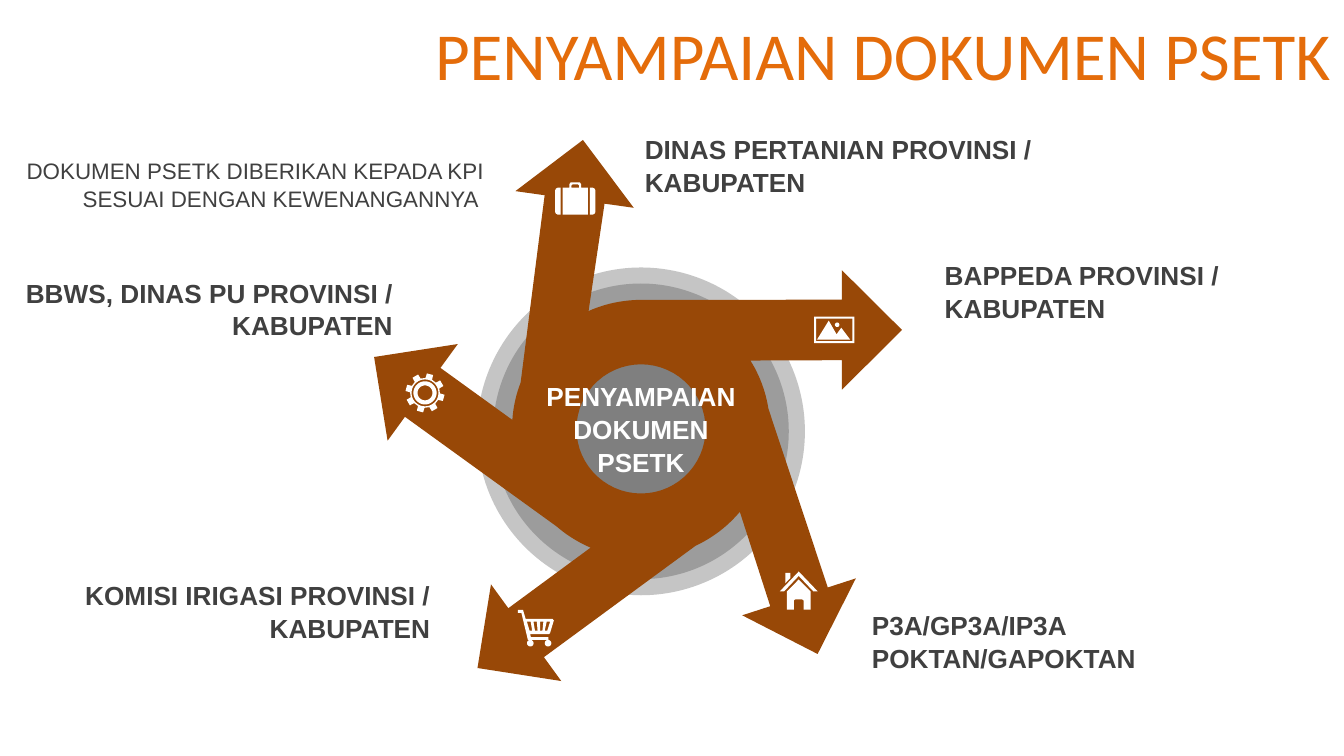
from math import cos, radians, sin

from lxml import etree
from pptx import Presentation
from pptx.dml.color import RGBColor
from pptx.enum.shapes import MSO_SHAPE
from pptx.enum.text import MSO_ANCHOR, PP_ALIGN
from pptx.oxml.ns import qn
from pptx.util import Pt

OVAL = MSO_SHAPE.OVAL
TOP, MIDDLE = MSO_ANCHOR.TOP, MSO_ANCHOR.MIDDLE
LEFT, CENTER, RIGHT = PP_ALIGN.LEFT, PP_ALIGN.CENTER, PP_ALIGN.RIGHT

ORANGE = RGBColor(0xE4, 0x6C, 0x0A)
BROWN = RGBColor(0x98, 0x48, 0x07)
GRAY = RGBColor(0x3F, 0x3F, 0x3F)
INK = RGBColor(0x40, 0x40, 0x40)
WHITE = RGBColor(0xFF, 0xFF, 0xFF)

HUB = (343.4, 229.8)
HUB_RADIUS = 69.1
HOLE_RADIUS = 34.6
RING_CENTER = (343.4, 231.1)
RING_RADII = (87.8, 79.2, 54)
HEAD_LENGTH, HEAD_HALF, SHAFT_HALF = 32.2, 32, 16.2

# hub arc start and end (degrees), arrow tip, arrow heading (degrees)
ARROWS = [
    (-114, -90, (483.2, 176.8), 0),
    (-32, -9, (438, 350.4), 72),
    (40, 65, (255.8, 357.9), 144),
    (113, 131, (200.4, 191.3), 216),
    (184, 201, (312.3, 75), 278),
]

# text, left, top, width, height, alignment
LABELS = [
    ("KOMISI IRIGASI PROVINSI / KABUPATEN", 4.3, 306.7, 233.3, 41, RIGHT),
    ("BBWS, DINAS PU PROVINSI / KABUPATEN", 6.5, 144.7, 211, 41, RIGHT),
    ("DINAS PERTANIAN PROVINSI / KABUPATEN", 338.4, 67.7, 260, 41, LEFT),
    ("BAPPEDA PROVINSI / KABUPATEN", 499, 135.4, 209.5, 41, LEFT),
    ("P3A/GP3A/IP3A POKTAN/GAPOKTAN", 460, 322.6, 260, 41, LEFT),
]


def polar(center, radius, angle):
    a = radians(angle)
    return center[0] + radius * cos(a), center[1] + radius * sin(a)


def arc(center, radius, start, end, steps=12):
    return [polar(center, radius, start + (end - start) * i / steps)
            for i in range(steps + 1)]


def circle(center, radius):
    return arc(center, radius, 0, 360, 60)


def rectangle(left, top, right, bottom):
    return [(left, top), (right, top), (right, bottom), (left, bottom)]


def arrow_head(tip, heading):
    """Shaft end, wing, tip, wing, shaft end, clockwise."""
    c, s = cos(radians(heading)), sin(radians(heading))
    local = [(-HEAD_LENGTH, -SHAFT_HALF), (-HEAD_LENGTH, -HEAD_HALF), (0, 0),
             (-HEAD_LENGTH, HEAD_HALF), (-HEAD_LENGTH, SHAFT_HALF)]
    return [(tip[0] + x * c - y * s, tip[1] + x * s + y * c) for x, y in local]


def add_outline(slide, contours, color, origin=(0, 0)):
    """Filled freeform; contours inside others become holes."""
    scaled = [[(round(100 * (x + origin[0])), round(100 * (y + origin[1])))
               for x, y in contour] for contour in contours]
    builder = slide.shapes.build_freeform(*scaled[0][0], scale=Pt(1) / 100)
    builder.add_line_segments(scaled[0][1:], close=True)
    for contour in scaled[1:]:
        builder.move_to(*contour[0])
        builder.add_line_segments(contour[1:], close=True)
    sp = builder.convert_to_shape()
    sp.shadow.inherit = False
    sp.fill.solid()
    sp.fill.fore_color.rgb = color
    sp.line.fill.background()


def add_ring(slide, radius):
    x, y = RING_CENTER
    sp = slide.shapes.add_shape(OVAL, Pt(x - radius), Pt(y - radius),
                                Pt(2 * radius), Pt(2 * radius))
    sp.shadow.inherit = False
    sp.fill.solid()
    sp.fill.fore_color.rgb = GRAY
    sp.line.fill.background()
    for color in sp.fill._xPr.iter(qn("a:srgbClr")):
        etree.SubElement(color, qn("a:alpha"), val="30000")


def add_text(slide, text, left, top, width, height, align, size=14, color=INK,
             bold=True, font="Arial", anchor=MIDDLE, spacing=1.05):
    box = slide.shapes.add_textbox(Pt(left), Pt(top), Pt(width), Pt(height))
    tf = box.text_frame
    tf.word_wrap = True
    tf.vertical_anchor = anchor
    p = tf.paragraphs[0]
    p.alignment = align
    p.line_spacing = spacing
    r = p.add_run()
    r.text = text
    r.font.name = font
    r.font.size = Pt(size)
    r.font.bold = bold
    r.font.color.rgb = color


def add_arrow_wheel(slide):
    outline = []
    for start, end, tip, heading in ARROWS:
        outline += arc(HUB, HUB_RADIUS, start, end) + arrow_head(tip, heading)
    add_outline(slide, [outline, circle(HUB, HOLE_RADIUS)], BROWN)


def cart():
    body = [(0, 0), (2.8, 0), (4.2, 4.9), (18.6, 4.9), (19.3, 5.7),
            (17.3, 12.4), (16.7, 13), (6.6, 13), (7, 14.6), (16.4, 14.6),
            (16.4, 16.1), (5.4, 16.1), (1.9, 1.6), (0, 1.6)]
    slots = [(4.9, 6.9, 6.3, 7.7), (8.4, 10.2, 9.2, 10.6),
             (12, 13.7, 11.9, 13.2), (15.5, 17.3, 14.4, 15.8)]
    return [body] + [[(a, 6.4), (b, 6.4), (d, 11.2), (c, 11.2)]
                     for a, b, c, d in slots] + [
        circle((x, 17.9), 1.75) for x in (6.7, 16.2)]


def house():
    roof = [(10.1, 0), (20.2, 10.6), (17.9, 10.6), (10.1, 2.4),
            (2.3, 10.6), (0, 10.6)]
    chimney = [(2.9, 0.7), (5.6, 0.7), (5.6, 3.5), (2.9, 6.3)]
    walls = [(10.1, 4.3), (16.5, 10.8), (16.5, 20.4), (12.7, 20.4),
             (12.7, 15.5), (11.9, 14.9), (8.3, 14.9), (7.5, 15.5),
             (7.5, 20.4), (3.7, 20.4), (3.7, 10.8)]
    return [roof, chimney, walls]


def landscape():
    hills = [(7.9, 2.2), (12.1, 9.5), (14.6, 6), (19.4, 12.4), (1.6, 12.4)]
    return [rectangle(0, 0, 21.6, 14.2), rectangle(1.1, 1.1, 20.5, 13.1),
            hills, circle((12.4, 4.4), 1.2)]


def suitcase():
    side = [(2.9, 2.9), (1.4, 2.9), (0.4, 3.4), (0, 4.4), (0, 15.8),
            (0.4, 16.8), (1.4, 17.3), (2.9, 17.3)]
    middle = [(4.1, 17.3), (4.1, 2.9), (7.6, 2.9), (7.6, 1), (8.4, 0),
              (13.2, 0), (14, 1), (14, 2.9), (17.5, 2.9), (17.5, 17.3)]
    handle = [(8.7, 2.9), (8.7, 1.7), (9.3, 1.1), (12.3, 1.1),
              (12.9, 1.7), (12.9, 2.9)]
    return [side, [(21.6 - x, y) for x, y in side], middle, handle]


def gear():
    center = (0, 0)
    teeth = [polar(center, radius, 15 + 45 * i + turn) for i in range(8)
             for radius, turn in ((8, -13), (10.5, -9.5), (10.5, 9.5), (8, 13))]
    return [teeth] + [circle(center, radius) for radius in (7.2, 6.2, 4)]


def main():
    prs = Presentation()
    prs.slide_width, prs.slide_height = Pt(720), Pt(405)
    s = prs.slides.add_slide(prs.slide_layouts[6])

    add_text(s, "PENYAMPAIAN DOKUMEN PSETK", 70.6, -1.4, 649.4, 60.5, RIGHT,
             size=36, color=ORANGE, bold=False, font="Calibri", spacing=1)
    for radius in RING_RADII:
        add_ring(s, radius)
    add_arrow_wheel(s)
    add_text(s, "PENYAMPAIAN DOKUMEN PSETK", 277.9, 199.4, 131, 58.3, CENTER,
             color=WHITE, anchor=TOP)
    for label in LABELS:
        add_text(s, *label)

    icons = [(cart, (277.4, 326.7)), (house, (417.8, 306.2)),
             (landscape, (436.1, 169.6)), (suitcase, (297.4, 97.7)),
             (gear, (227.7, 210.5))]
    for icon, origin in icons:
        add_outline(s, icon(), WHITE, origin)
    add_text(s, "DOKUMEN PSETK DIBERIKAN KEPADA KPI SESUAI DENGAN KEWENANGANNYA ",
             6.5, 79.9, 260, 36, RIGHT, size=12, bold=False, anchor=TOP)
    prs.save("out.pptx")


if __name__ == "__main__":
    main()
